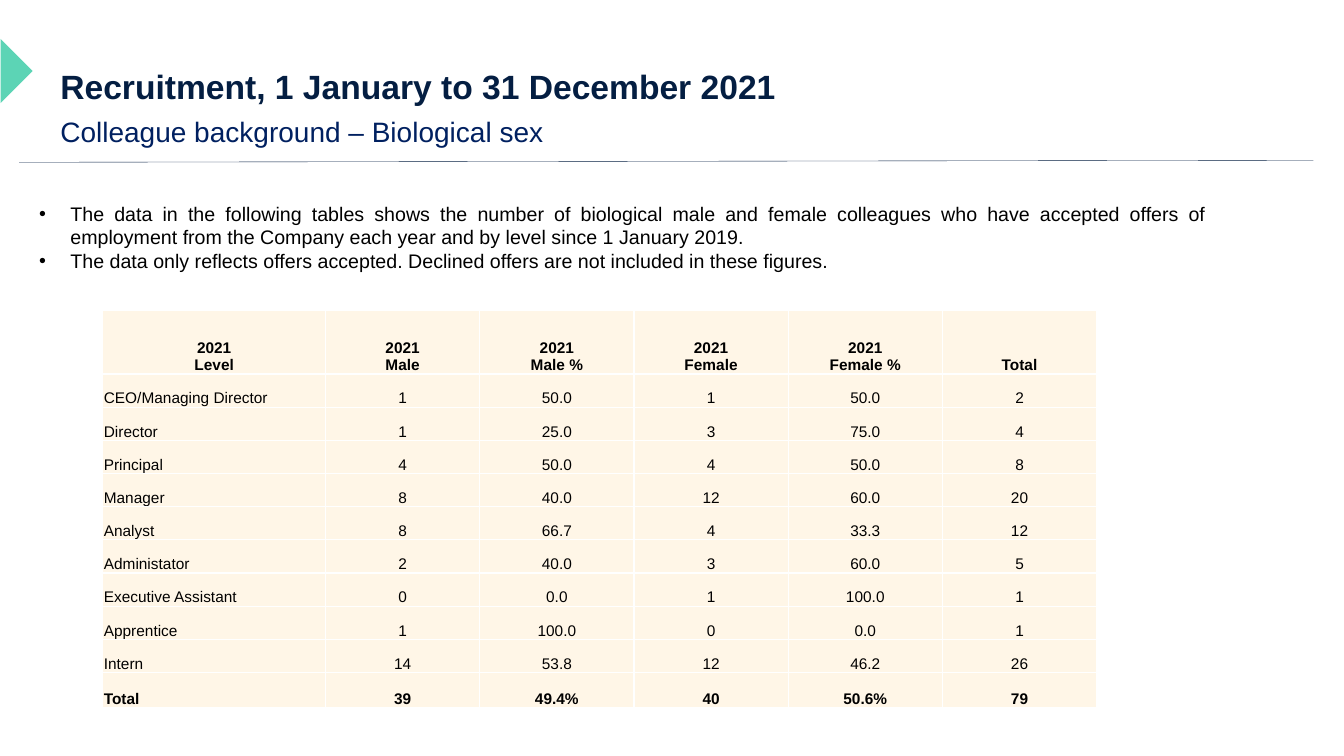
from dataclasses import dataclass

from lxml import etree
from pptx import Presentation, util as u
from pptx.dml.color import RGBColor
from pptx.enum import shapes, text
from pptx.oxml.ns import qn
from pptx.slide import Slide
from pptx.table import _Cell

COLUMNS, ROWS = 160, 90  # square grid units, twelve to the inch
COLORS = {"navy": "041E42", "blue": "002060", "mint": "5CD4B5",
          "cream": "FFF6E7", "white": "FFFFFF", "black": "000000"}
FONT = "Arial"


@dataclass
class TextBlock:
    left: float
    top: float
    width: float
    height: float
    lines: list[str]
    size: float
    color: str
    bold: bool = False
    bulleted: bool = False
    line_spacing: float = 1.0
    anchor: text.MSO_ANCHOR = text.MSO_ANCHOR.TOP


HEADINGS = [
    TextBlock(6, 6.72, 115.8, 7.56, ["Recruitment, 1 January to 31 December 2021"],
              24, "navy", bold=True, line_spacing=0.9, anchor=text.MSO_ANCHOR.MIDDLE),
    TextBlock(6, 13.44, 106.8, 4.8, ["Colleague background – Biological sex"],
              20, "blue", line_spacing=0.9),
]
NOTES = TextBlock(3.48, 23.4, 141.36, 9.72, [
    "The data in the following tables shows the number of biological male and female "
    "colleagues who have accepted offers of employment from the Company each year "
    "and by level since 1 January 2019.",
    "The data only reflects offers accepted. Declined offers are not included in these figures.",
], 14, "black", bulleted=True)

RECRUITS = [
    ("2021\nLevel", "2021\nMale", "2021\nMale %", "2021\nFemale", "2021\nFemale %", "Total"),
    ("CEO/Managing Director", "1", "50.0", "1", "50.0", "2"),
    ("Director", "1", "25.0", "3", "75.0", "4"),
    ("Principal", "4", "50.0", "4", "50.0", "8"),
    ("Manager", "8", "40.0", "12", "60.0", "20"),
    ("Analyst", "8", "66.7", "4", "33.3", "12"),
    ("Administator", "2", "40.0", "3", "60.0", "5"),
    ("Executive Assistant", "0", "0.0", "1", "100.0", "1"),
    ("Apprentice", "1", "100.0", "0", "0.0", "1"),
    ("Intern", "14", "53.8", "12", "46.2", "26"),
    ("Total", "39", "49.4%", "40", "50.6%", "79"),
]
TABLE_LEFT, TABLE_TOP = 12.24, 36.96
COLUMN_WIDTHS = [26.52] + [18.36] * 5
ROW_HEIGHTS = [7.56] + [3.95] * 9 + [4.2]


def grid(units: float) -> int:
    return u.Inches(units / 12)


def rgb(name: str) -> RGBColor:
    return RGBColor.from_string(COLORS[name])


def add_run(paragraph, words: str, size: float, color: str, bold: bool) -> None:
    run = paragraph.add_run()
    run.text = words
    run.font.name, run.font.size, run.font.bold = FONT, u.Pt(size), bold
    run.font.color.rgb = rgb(color)


def add_bullet(paragraph) -> None:
    properties = paragraph._p.get_or_add_pPr()
    indent = u.Inches(0.31)
    properties.set("marL", str(indent))
    properties.set("indent", str(-indent))
    etree.SubElement(properties, qn("a:buFont"), typeface=FONT)
    etree.SubElement(properties, qn("a:buChar"), char="•")


def add_text(slide: Slide, block: TextBlock) -> None:
    box = slide.shapes.add_textbox(*map(grid, (block.left, block.top, block.width, block.height)))
    frame = box.text_frame
    frame.word_wrap = True
    frame.vertical_anchor = block.anchor
    for index, line in enumerate(block.lines):
        paragraph = frame.add_paragraph() if index else frame.paragraphs[0]
        paragraph.line_spacing = block.line_spacing
        if block.bulleted:
            paragraph.alignment = text.PP_ALIGN.JUSTIFY
            add_bullet(paragraph)
        add_run(paragraph, line, block.size, block.color, block.bold)


def add_borders(cell: _Cell) -> None:
    properties = cell._tc.get_or_add_tcPr()
    for index, side in enumerate(("lnL", "lnR", "lnT", "lnB")):
        line = etree.Element(qn(f"a:{side}"), w=str(u.Pt(1)))
        fill = etree.SubElement(line, qn("a:solidFill"))
        etree.SubElement(fill, qn("a:srgbClr"), val=COLORS["white"])
        properties.insert(index, line)


def fill_cell(cell: _Cell, words: str, bold: bool, centered: bool) -> None:
    cell.fill.solid()
    cell.fill.fore_color.rgb = rgb("cream")
    cell.margin_left = cell.margin_top = cell.margin_right = u.Inches(0.01)
    cell.margin_bottom = 0
    cell.vertical_anchor = text.MSO_ANCHOR.BOTTOM
    paragraph = cell.text_frame.paragraphs[0]
    paragraph.alignment = text.PP_ALIGN.CENTER if centered else text.PP_ALIGN.LEFT
    for index, line in enumerate(words.split("\n")):
        if index:
            paragraph.add_line_break()
        add_run(paragraph, line, 11, "black", bold)
    add_borders(cell)


def add_recruit_table(slide: Slide) -> None:
    table = slide.shapes.add_table(
        len(RECRUITS), len(COLUMN_WIDTHS), grid(TABLE_LEFT), grid(TABLE_TOP),
        grid(sum(COLUMN_WIDTHS)), grid(sum(ROW_HEIGHTS))).table
    table.first_row = table.horz_banding = False
    for column, width in zip(table.columns, COLUMN_WIDTHS):
        column.width = grid(width)
    for row, height in zip(table.rows, ROW_HEIGHTS):
        row.height = grid(height)
    last = len(RECRUITS) - 1
    for row_index, values in enumerate(RECRUITS):
        for column_index, words in enumerate(values):
            fill_cell(table.cell(row_index, column_index), words,
                      bold=row_index in (0, last),
                      centered=row_index == 0 or column_index > 0)


def add_decoration(slide: Slide) -> None:
    # Edge marker
    marker = slide.shapes.add_shape(shapes.MSO_SHAPE.RIGHT_TRIANGLE,
                                    *map(grid, (-2.64, 5.76, 5.4, 5.4)))
    marker.rotation = 225
    marker.shadow.inherit = False
    marker.fill.solid()
    marker.fill.fore_color.rgb = rgb("mint")
    marker.line.fill.background()
    # Rule under the headings
    rule = slide.shapes.add_connector(shapes.MSO_CONNECTOR.STRAIGHT,
                                      *map(grid, (2.28, 19.32, 156.36, 19.08)))
    rule.line.color.rgb = rgb("navy")
    rule.line.width = u.Pt(0.25)
    etree.SubElement(rule._element.spPr, qn("a:effectLst"))


def main() -> None:
    presentation = Presentation()
    presentation.slide_width, presentation.slide_height = grid(COLUMNS), grid(ROWS)
    slide = presentation.slides.add_slide(presentation.slide_layouts[6])
    add_decoration(slide)
    for heading in HEADINGS:
        add_text(slide, heading)
    add_recruit_table(slide)
    add_text(slide, NOTES)
    presentation.save("out.pptx")


if __name__ == "__main__":
    main()
